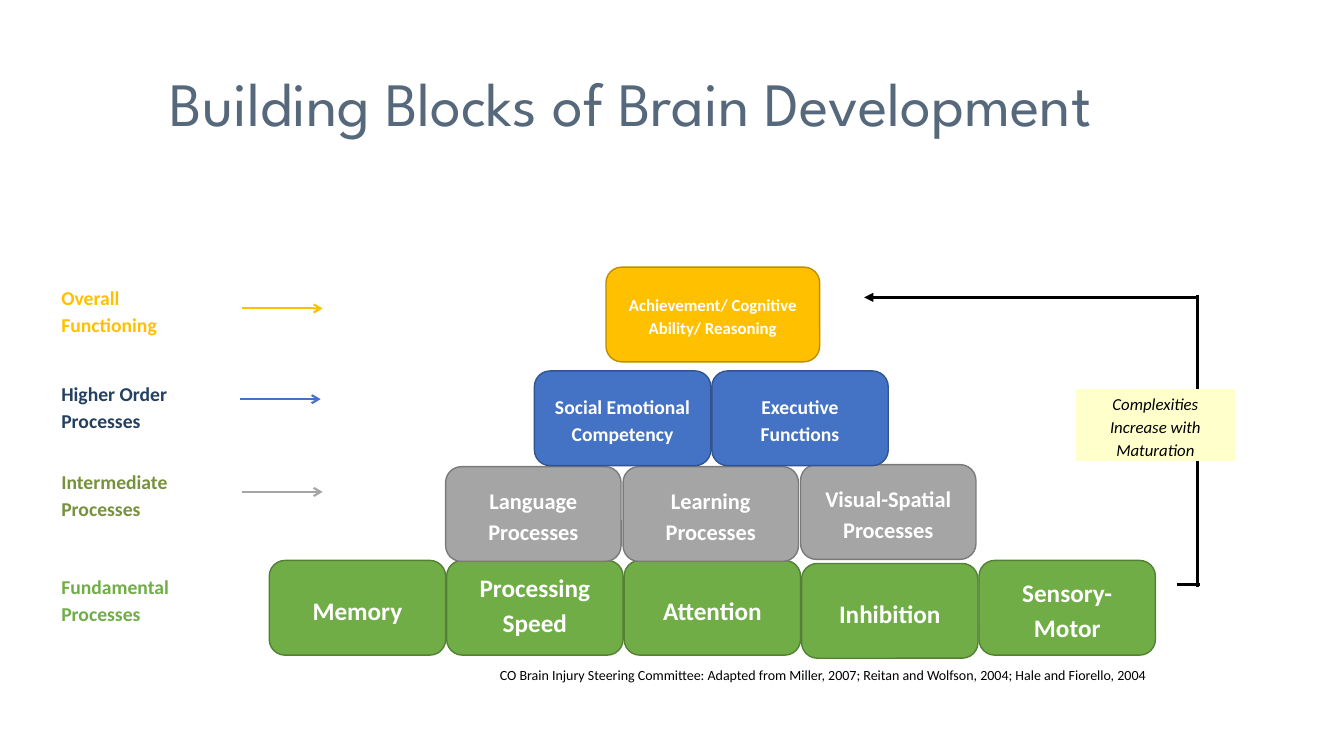
from dataclasses import dataclass
from typing import Optional

from lxml.etree import SubElement
from pptx import Presentation
from pptx.dml.color import RGBColor
from pptx.enum.shapes import MSO_CONNECTOR as Link, MSO_SHAPE as Form
from pptx.enum.text import MSO_ANCHOR as Anchor, PP_ALIGN as Align
from pptx.oxml.ns import qn
from pptx.util import Inches, Pt


@dataclass
class Font:
    size: float
    color: str
    bold: bool = False
    italic: bool = False
    face: str = "Calibri"


@dataclass
class Block:
    words: str
    drop: float = 0
    foot: float = 0.05  # bottom text margin


@dataclass
class Tier:
    left: float
    top: float
    width: float
    fill: str
    edge: str
    size: float
    blocks: list[Block]


@dataclass
class Level:
    words: str
    top: float
    color: str
    start: float = 0
    height: float = 0
    line: Optional[str] = None  # arrow colour, None for no arrow


STEP = 1.76
HIGH = 0.94

TIERS = [
    Tier(2.67, 5.56, 1.75, "70AD47", "538035", 18,
         [Block("Memory"), Block("Processing Speed", foot=0.15),
          Block("Attention"), Block("Inhibition", drop=0.03),
          Block("Sensory-Motor")]),
    Tier(4.42, 4.63, 1.74, "A5A5A5", "7A7A7A", 16,
         [Block("Language Processes"), Block("Learning Processes"),
          Block("Visual-Spatial Processes", drop=-0.02)]),
    Tier(5.3, 3.68, 1.75, "4472C4", "325491", 14,
         [Block("Social Emotional Competency"), Block("Executive Functions")]),
    Tier(6.01, 2.65, 2.12, "FFC000", "BD8E00", 12,
         [Block("Achievement/ Cognitive Ability/ Reasoning")]),
]

LEVELS = [
    Level("Overall\nFunctioning", 2.75, "FFC000", 2.4, 3.06, "FFC000"),
    Level("Higher Order\nProcesses", 3.71, "244061", 2.38, 3.96, "4472C4"),
    Level("Intermediate\nProcesses", 4.58, "76923C", 2.4, 4.88, "A5A5A5"),
    Level("Fundamental\nProcesses", 5.62, "70AD47"),
]

deck = Presentation()
deck.slide_width, deck.slide_height = Inches(13.33), Inches(7.5)
slide = deck.slides.add_slide(deck.slide_layouts[6])
shapes = slide.shapes


def rgb(color: str) -> RGBColor:
    return RGBColor.from_string(color)


def write(shape, words: str, font: Font, align: Align, after: float = 0) -> None:
    shape.text_frame.text = words
    for para in shape.text_frame.paragraphs:
        para.alignment = align
        para.line_spacing = 1.15
        para.space_after = Pt(after)
        for run in para.runs:
            run.font.name = font.face
            run.font.size = Pt(font.size)
            run.font.bold = font.bold
            run.font.italic = font.italic
            run.font.color.rgb = rgb(font.color)


def box(form: Form, left: float, top: float, width: float, height: float,
        words: str, font: Font, fill: str = "FFFFFF",
        edge: Optional[str] = None, align: Align = Align.CENTER,
        anchor: Anchor = Anchor.MIDDLE, foot: float = 0.05) -> None:
    shape = shapes.add_shape(form, Inches(left), Inches(top),
                             Inches(width), Inches(height))
    shape.shadow.inherit = False
    shape.fill.solid()
    shape.fill.fore_color.rgb = rgb(fill)
    if edge:
        shape.line.color.rgb = rgb(edge)
        shape.line.width = Pt(1)
    else:
        shape.line.fill.background()
    frame = shape.text_frame
    frame.word_wrap = True
    frame.vertical_anchor = anchor
    frame.margin_bottom = Inches(foot)
    write(shape, words, font, align, after=10)


def rule(x1: float, y1: float, x2: float, y2: float, color: str,
         weight: float, tip: Optional[str] = None) -> None:
    line = shapes.add_connector(Link.STRAIGHT, Inches(x1), Inches(y1),
                                Inches(x2), Inches(y2))
    line.line.color.rgb = rgb(color)
    line.line.width = Pt(weight)
    if tip:
        SubElement(line.line._get_or_add_ln(), qn("a:tailEnd"), type=tip)
    SubElement(line._element.spPr, qn("a:effectLst"))


# Title
box(Form.RECTANGLE, 0.64, 0.48, 11.24, 1.45,
    "Building Blocks of Brain Development",
    Font(44, "56687B", face="League Spartan"), anchor=Anchor.TOP)

# Pyramid, from the base up
for tier in TIERS:
    for col, block in enumerate(tier.blocks):
        box(Form.ROUNDED_RECTANGLE, tier.left + col * STEP,
            tier.top + block.drop, tier.width, HIGH, block.words,
            Font(tier.size, "FFFFFF", bold=True), tier.fill, tier.edge,
            foot=block.foot)

# Level names with their arrows
for level in LEVELS:
    label = shapes.add_textbox(Inches(0.51), Inches(level.top),
                               Inches(1.7), Inches(0.67))
    label.text_frame.word_wrap = False
    write(label, level.words, Font(14, level.color, bold=True), Align.LEFT)
    if level.line:
        rule(level.start, level.height, level.start + 0.8, level.height,
             level.line, 1.5, "arrow")

# Bracket that leads from base to top
rule(11.88, 2.93, 11.88, 5.82, "000000", 2.25)
rule(11.89, 2.95, 8.57, 2.95, "000000", 2.25, "triangle")
rule(11.67, 5.8, 11.9, 5.8, "000000", 2.25)
box(Form.RECTANGLE, 10.68, 3.87, 1.56, 0.7,
    "Complexities Increase with Maturation",
    Font(12, "000000", italic=True), "FFFFCC", "FFFFCC")

# Source line
box(Form.RECTANGLE, 4.58, 6.54, 6.88, 0.47,
    "CO Brain Injury Steering Committee: Adapted from Miller, 2007; "
    "Reitan and Wolfson, 2004; Hale and Fiorello, 2004",
    Font(10, "000000"), align=Align.RIGHT, anchor=Anchor.TOP)

deck.save("out.pptx")
